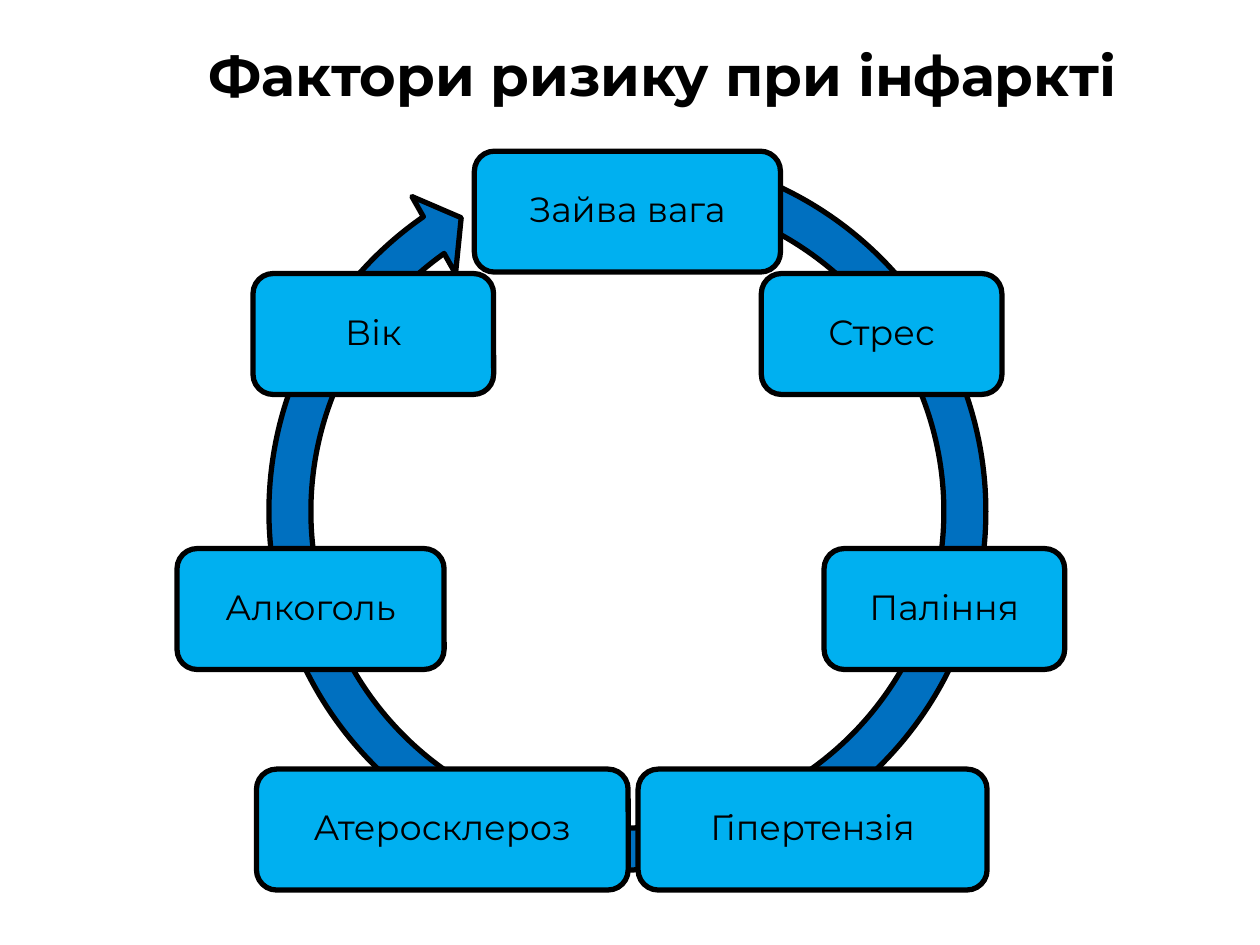
import math
from dataclasses import dataclass

from pptx import Presentation
from pptx import util as u
from pptx.dml.color import RGBColor
from pptx.enum import shapes, text


@dataclass(frozen=True)
class Theme:
    font: str = "Montserrat"
    title_size: int = 32
    label_size: int = 20
    ink: str = "000000"
    ring: str = "0070C0"
    node: str = "00B0F0"
    outline: float = 3


THEME = Theme()

# Label, box width and sideways shift, clockwise from the top
FACTORS = [
    ("Зайва вага", 2.43, 0),
    ("Стрес", 1.91, 0),
    ("Паління", 1.91, 0),
    ("Гіпертензія", 2.77, 0.35),
    ("Атеросклероз", 2.95, -0.35),
    ("Алкоголь", 2.12, 0),
    ("Вік", 1.91, 0),
]
NODE_HEIGHT = 0.96


def write_text(frame, words, *, size, bold=False, anchor, spacing=1.0, wrap=True):
    frame.auto_size = text.MSO_AUTO_SIZE.NONE
    frame.word_wrap = wrap
    frame.vertical_anchor = anchor
    para = frame.paragraphs[0]
    para.alignment = text.PP_ALIGN.CENTER
    para.line_spacing = spacing
    span = para.add_run()
    span.text = words
    span.font.name = THEME.font
    span.font.size = u.Pt(size)
    span.font.bold = bold
    span.font.color.rgb = RGBColor.from_string(THEME.ink)


def add_outlined(page, kind, box, fill):
    shape = page.shapes.add_shape(kind, *(u.Inches(length) for length in box))
    shape.shadow.inherit = False
    shape.fill.solid()
    shape.fill.fore_color.rgb = RGBColor.from_string(fill)
    shape.line.color.rgb = RGBColor.from_string(THEME.ink)
    shape.line.width = u.Pt(THEME.outline)
    return shape


def place_title(page, box, words):
    title = page.shapes.title
    title.left, title.top, title.width, title.height = (u.Inches(length) for length in box)
    write_text(title.text_frame, words, size=THEME.title_size, bold=True,
               anchor=text.MSO_ANCHOR.TOP, wrap=False)


def place_cycle(page, box):
    left, top, width, height = box

    # Ring arrow behind the nodes
    ring = add_outlined(page, shapes.MSO_SHAPE.CIRCULAR_ARROW, box, THEME.ring)
    for index, value in enumerate((0.055, 3.307, 140.991, 171.923, 0.058)):
        ring.adjustments[index] = value

    # Nodes evenly spaced around a circle
    centre_x = left + width / 2
    centre_y = top + height / 2 + 0.2
    radius = 2.58
    for index, (label, node_width, shift) in enumerate(FACTORS):
        angle = 2 * math.pi * index / len(FACTORS)
        node_x = centre_x + radius * math.sin(angle) + shift
        node_y = centre_y - radius * math.cos(angle)
        node_box = (node_x - node_width / 2, node_y - NODE_HEIGHT / 2,
                    node_width, NODE_HEIGHT)
        node = add_outlined(page, shapes.MSO_SHAPE.ROUNDED_RECTANGLE, node_box, THEME.node)
        write_text(node.text_frame, label, size=THEME.label_size,
                   anchor=text.MSO_ANCHOR.MIDDLE, spacing=0.9)


def main():
    deck = Presentation()
    deck.slide_width, deck.slide_height = u.Inches(10), u.Inches(7.5)
    title_only = deck.slide_layouts[5]
    page = deck.slides.add_slide(title_only)
    place_title(page, (1.41, 0.27, 7.7, 0.64), "Фактори ризику при інфаркті")
    place_cycle(page, (1.95, 1.03, 6.06, 6.06))
    deck.save("out.pptx")


if __name__ == "__main__":
    main()
